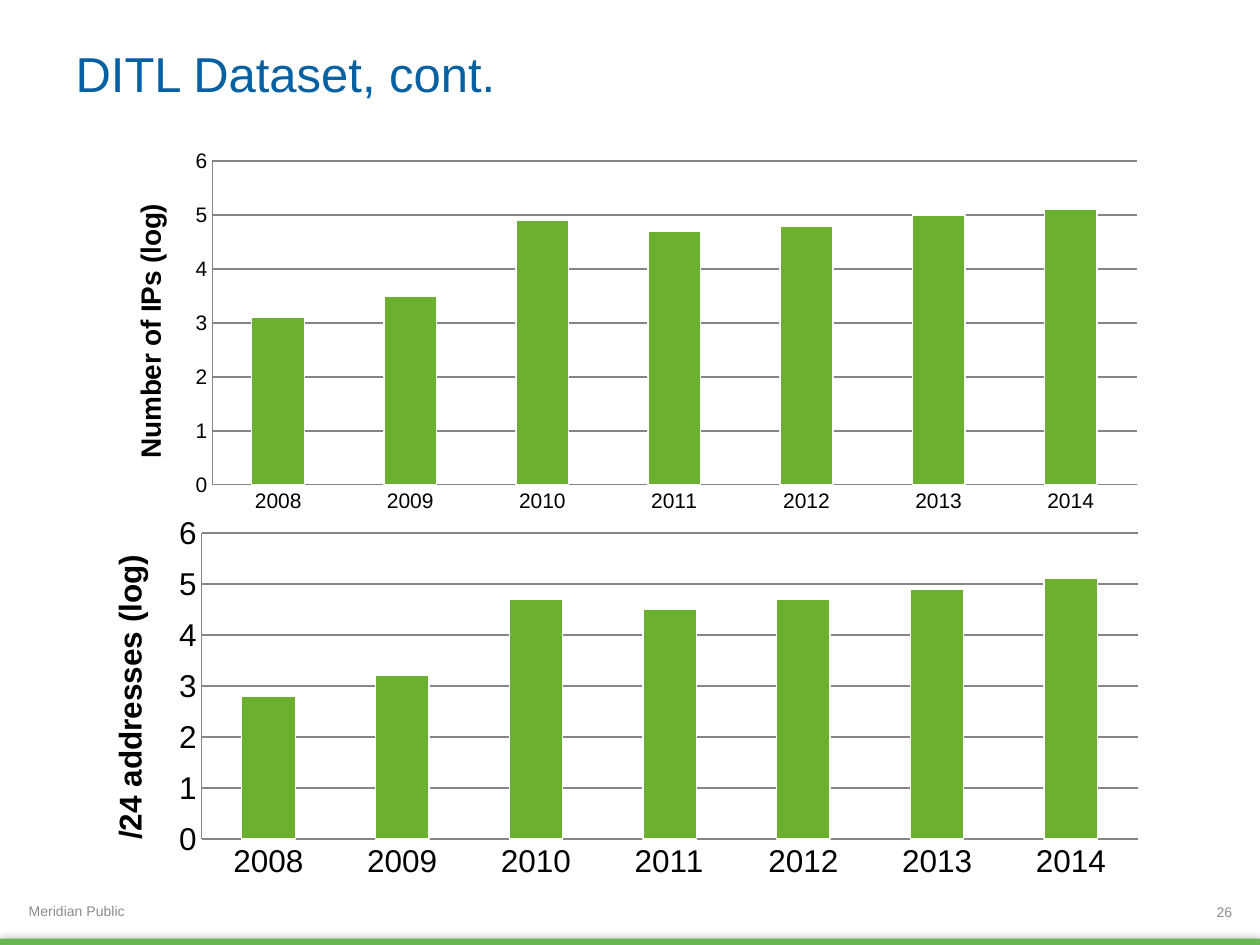
from dataclasses import dataclass

from lxml import etree
from pptx import Presentation
from pptx.chart.data import CategoryChartData
from pptx.dml.color import RGBColor
from pptx.enum.chart import XL_CHART_TYPE, XL_TICK_MARK
from pptx.enum.shapes import MSO_SHAPE
from pptx.enum.text import MSO_ANCHOR, PP_ALIGN
from pptx.oxml import parse_xml
from pptx.oxml.ns import nsdecls, qn
from pptx.util import Cm, Pt

COLUMN = XL_CHART_TYPE.COLUMN_CLUSTERED
NO_TICK = XL_TICK_MARK.NONE
RECTANGLE = MSO_SHAPE.RECTANGLE
MIDDLE = MSO_ANCHOR.MIDDLE
LEFT = PP_ALIGN.LEFT
RIGHT = PP_ALIGN.RIGHT
TITLE_ONLY = 5


@dataclass(frozen=True)
class Theme:
    font: str = "Arial"
    title: str = "0661A3"
    footer: str = "8C8C8C"
    text: str = "000000"
    column: str = "6BB02E"
    outline: str = "FFFFFF"
    grid: str = "868686"
    band: str = "69B453"
    title_size: int = 28
    footer_size: int = 8


YEARS = [str(year) for year in range(2008, 2015)]
CHARTS = [
    dict(
        box=(2.16, 2.87, 21.18, 7.59),
        plot=(0.1, 0.05, 0.88, 0.86),
        axis_title="Number of IPs (log)",
        values=[3.1, 3.5, 4.9, 4.7, 4.8, 5, 5.1],
        label_size=12,
        title_size=16,
    ),
    dict(
        box=(1.68, 10.21, 21.69, 7.62),
        plot=(0.11, 0.07, 0.87, 0.81),
        axis_title="/24 addresses (log)",
        values=[2.8, 3.2, 4.7, 4.5, 4.7, 4.9, 5.1],
        label_size=18,
        title_size=18,
    ),
]


def format_font(font, name, size, color, bold=False):
    font.name = name
    font.size = Pt(size)
    font.bold = bold
    font.color.rgb = RGBColor.from_string(color)


def write_text(frame, text, name, size, color, align=LEFT, bold=False):
    frame.word_wrap = True
    frame.vertical_anchor = MIDDLE
    paragraph = frame.paragraphs[0]
    paragraph.alignment = align
    run = paragraph.add_run()
    run.text = text
    format_font(run.font, name, size, color, bold)


def lengths(box):
    return [Cm(value) for value in box]


class SlideBuilder:
    def __init__(self, slide, theme):
        self.slide = slide
        self.theme = theme

    def band(self, box):
        shape = self.slide.shapes.add_shape(RECTANGLE, *lengths(box))
        shape.shadow.inherit = False
        shape.fill.solid()
        shape.fill.fore_color.rgb = RGBColor.from_string(self.theme.band)
        shape.line.fill.background()
        effects = shape._element.spPr.find(qn("a:effectLst"))
        shadow = etree.SubElement(effects, qn("a:outerShdw"), blurRad=str(Pt(5)), dist="0", dir="0")
        color = etree.SubElement(shadow, qn("a:srgbClr"), val="000000")
        etree.SubElement(color, qn("a:alpha"), val="40000")

    def title(self, text, box):
        shape = self.slide.shapes.title
        shape.left, shape.top, shape.width, shape.height = lengths(box)
        write_text(shape.text_frame, text, self.theme.font, self.theme.title_size, self.theme.title)

    def footer(self, text, box, align=LEFT):
        frame = self.slide.shapes.add_textbox(*lengths(box)).text_frame
        frame.margin_top = frame.margin_bottom = 0
        write_text(frame, text, self.theme.font, self.theme.footer_size, self.theme.footer, align)

    def line(self, line_format, color):
        line_format.color.rgb = RGBColor.from_string(color)
        line_format.width = Pt(0.75)

    def place_plot(self, chart, plot):
        parts = "".join(f'<c:{tag} val="{value}"/>' for tag, value in zip("xywh", plot))
        layout = parse_xml(
            f'<c:layout {nsdecls("c")}><c:manualLayout><c:layoutTarget val="inner"/>'
            f'<c:xMode val="edge"/><c:yMode val="edge"/>{parts}</c:manualLayout></c:layout>'
        )
        area = chart._chartSpace.chart.plotArea
        for previous in area.findall(qn("c:layout")):
            area.remove(previous)
        area.insert(0, layout)

    def column_chart(self, box, plot, axis_title, values, label_size, title_size):
        theme = self.theme
        data = CategoryChartData()
        data.categories = YEARS
        data.add_series("Series 1", values)
        chart = self.slide.shapes.add_chart(COLUMN, *lengths(box), data).chart
        chart.has_legend = False
        chart.has_title = False
        format_font(chart.font, theme.font, label_size, theme.text)
        self.place_plot(chart, plot)

        columns = chart.plots[0]
        columns.gap_width = 150
        columns.vary_by_categories = False
        series_format = columns.series[0].format
        series_format.fill.solid()
        series_format.fill.fore_color.rgb = RGBColor.from_string(theme.column)
        self.line(series_format.line, theme.outline)

        for axis in (chart.category_axis, chart.value_axis):
            axis.major_tick_mark = axis.minor_tick_mark = NO_TICK
            self.line(axis.format.line, theme.grid)
        axis = chart.value_axis
        axis.minimum_scale, axis.maximum_scale, axis.major_unit = 0, 6, 1
        axis.tick_labels.number_format = "0"
        axis.tick_labels.number_format_is_linked = False
        axis.has_major_gridlines = True
        self.line(axis.major_gridlines.format.line, theme.grid)
        paragraph = axis.axis_title.text_frame.paragraphs[0]
        run = paragraph.add_run()
        run.text = axis_title
        format_font(run.font, theme.font, title_size, theme.text, bold=True)


def main():
    presentation = Presentation()
    presentation.slide_width, presentation.slide_height = Cm(25.4), Cm(19.05)
    slide = presentation.slides.add_slide(presentation.slide_layouts[TITLE_ONLY])
    builder = SlideBuilder(slide, Theme())
    builder.band((0, 18.92, 25.4, 0.13))
    builder.footer("Meridian Public", (0.33, 18.11, 8.43, 0.51))
    builder.title("DITL Dataset, cont.", (1.27, 0.69, 22.86, 1.55))
    builder.footer("26", (24.1, 18.16, 0.99, 0.43), align=RIGHT)
    for chart in CHARTS:
        builder.column_chart(**chart)
    presentation.save("out.pptx")


if __name__ == "__main__":
    main()
